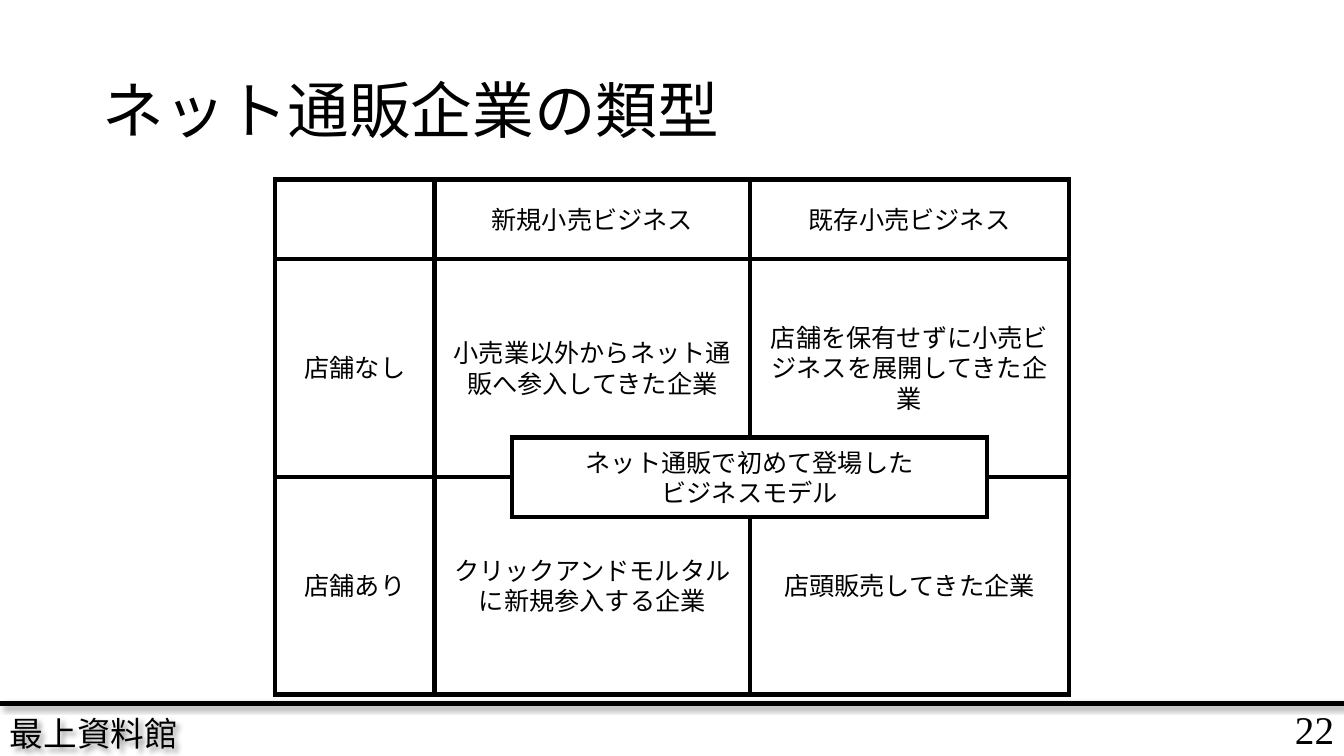
from dataclasses import dataclass
from itertools import accumulate

from lxml import etree
from pptx import Presentation
from pptx.dml.color import RGBColor
from pptx.enum.shapes import MSO_CONNECTOR, MSO_SHAPE
from pptx.enum.text import MSO_ANCHOR, MSO_AUTO_SIZE, PP_ALIGN
from pptx.oxml.ns import qn
from pptx.util import Inches, Pt


@dataclass(frozen=True)
class Theme:
    ink: RGBColor = RGBColor(0, 0, 0)
    paper: RGBColor = RGBColor(255, 255, 255)
    title_font: str = "Noto Sans CJK JP"
    body_font: str = "Times New Roman"
    title_size: int = 44
    number_size: int = 28
    footer_size: int = 24
    body_size: int = 18
    line_width: int = 3


THEME = Theme()
GRID_LEFT, GRID_TOP = 2.73, 1.78
COLUMN_WIDTHS = (1.58, 3.13, 3.16)
ROW_HEIGHTS = (0.79, 2.16, 2.16)
BUSINESS_TYPES = (
    ("", "新規小売ビジネス", "既存小売ビジネス"),
    ("店舗なし", "小売業以外からネット通販へ参入してきた企業",
     "店舗を保有せずに小売ビジネスを展開してきた企業"),
    ("店舗あり", "クリックアンドモルタルに新規参入する企業", "店頭販売してきた企業"),
)


def write(frame, lines, size, align, font=THEME.body_font):
    """Fill a text frame with one formatted paragraph per line."""
    frame.word_wrap = True
    frame.vertical_anchor = MSO_ANCHOR.MIDDLE
    frame.text = "\n".join(lines)
    for para in frame.paragraphs:
        para.alignment = align
        para.font.name = font
        para.font.size = Pt(size)
        para.font.color.rgb = THEME.ink


def add_shadow(shape):
    """Give a shape a soft shadow towards the lower right."""
    effects = etree.SubElement(shape._element.spPr, qn("a:effectLst"))
    shadow = etree.SubElement(
        effects, qn("a:outerShdw"), blurRad=str(Pt(4)), dist=str(Pt(3)),
        dir=str(45 * 60000), algn="tl", rotWithShape="0")
    color = etree.SubElement(shadow, qn("a:srgbClr"), val=str(THEME.ink))
    etree.SubElement(color, qn("a:alpha"), val="40000")


def set_title(page, text):
    title = page.shapes.title
    title.left, title.top = Inches(0.92), Inches(0.4)
    title.width, title.height = Inches(11.5), Inches(1.45)
    frame = title.text_frame
    write(frame, [text], THEME.title_size, PP_ALIGN.LEFT, THEME.title_font)
    frame.auto_size = MSO_AUTO_SIZE.NONE
    frame.paragraphs[0].line_spacing = 0.9


def add_label(page, text, left, top, width, height, size, align):
    box = page.shapes.add_textbox(
        Inches(left), Inches(top), Inches(width), Inches(height))
    write(box.text_frame, [text], size, align)
    return box


def add_footer(page):
    add_label(page, "22", 11.55, 6.98, 1.78, 0.51,
              THEME.number_size, PP_ALIGN.RIGHT)
    source = add_label(page, "最上資料館", 0, 7.05, 3.6, 0.45,
                       THEME.footer_size, PP_ALIGN.LEFT)
    add_shadow(source)
    rule = page.shapes.add_connector(
        MSO_CONNECTOR.STRAIGHT, 0, Inches(6.98), Inches(13.33), Inches(6.98))
    rule.line.color.rgb = THEME.ink
    rule.line.width = Pt(THEME.line_width)
    add_shadow(rule)


def add_frame(page, lines, left, top, width, height):
    """Draw a sharp-cornered outlined box with centred text."""
    box = page.shapes.add_shape(
        MSO_SHAPE.RECTANGLE, Inches(left), Inches(top),
        Inches(width), Inches(height))
    box.shadow.inherit = False
    box.fill.solid()
    box.fill.fore_color.rgb = THEME.paper
    box.line.color.rgb = THEME.ink
    box.line.width = Pt(THEME.line_width)
    etree.SubElement(box.line._get_or_add_ln(), qn("a:miter"), lim="800000")
    if any(lines):
        write(box.text_frame, lines, THEME.body_size, PP_ALIGN.CENTER)


def add_type_grid(page):
    lefts = list(accumulate(COLUMN_WIDTHS, initial=GRID_LEFT))
    tops = accumulate(ROW_HEIGHTS, initial=GRID_TOP)
    for top, height, texts in zip(tops, ROW_HEIGHTS, BUSINESS_TYPES):
        for left, width, text in zip(lefts, COLUMN_WIDTHS, texts):
            add_frame(page, [text], left, top, width, height)


def main():
    deck = Presentation()
    deck.slide_width, deck.slide_height = Inches(13.33), Inches(7.5)
    page = deck.slides.add_slide(deck.slide_layouts.get_by_name("Title Only"))
    add_footer(page)
    set_title(page, "ネット通販企業の類型")
    add_type_grid(page)
    add_frame(page, ["ネット通販で初めて登場した", "ビジネスモデル"],
              5.08, 4.34, 4.71, 0.79)
    deck.save("out.pptx")


if __name__ == "__main__":
    main()
